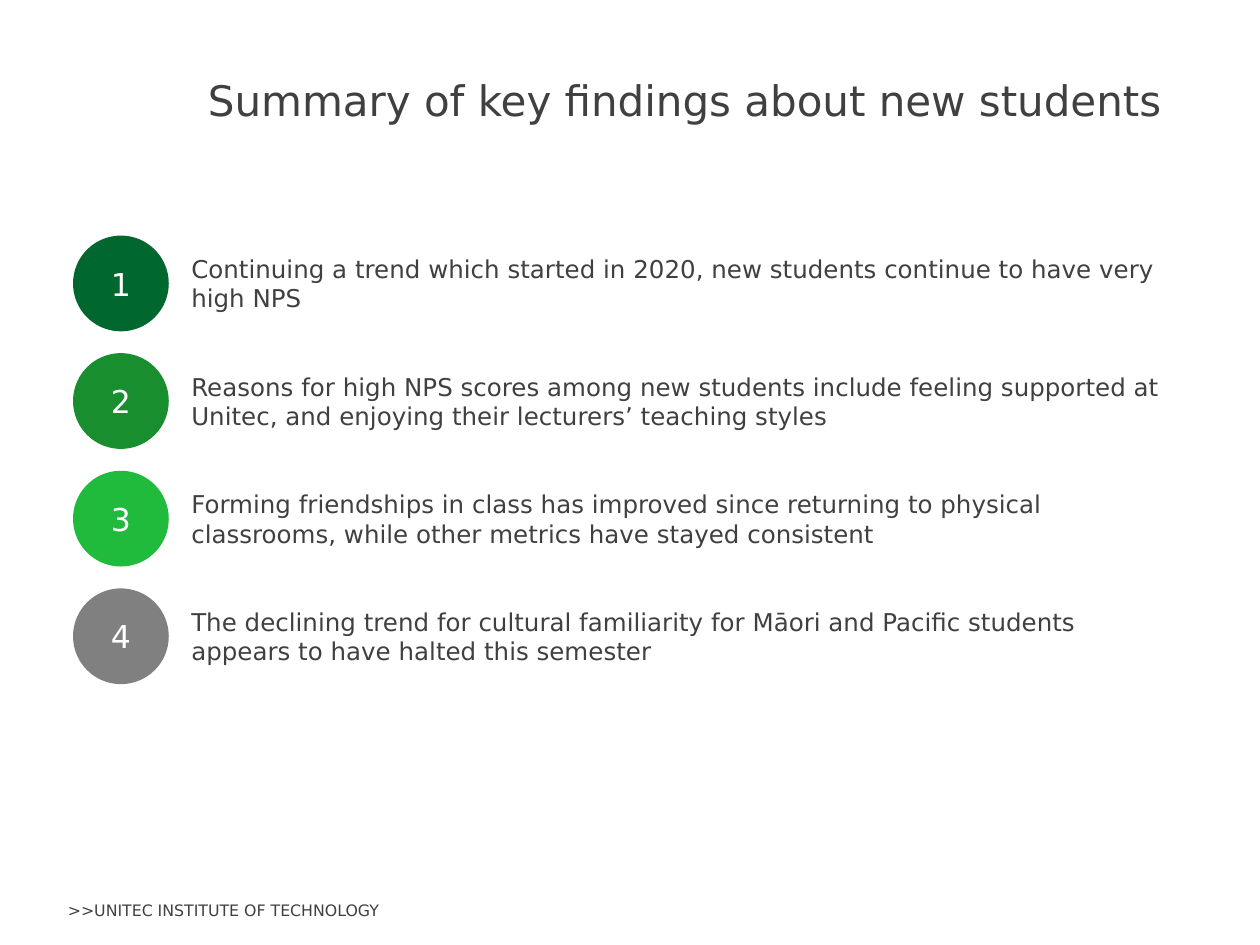
"""Build the summary slide of key findings about new students."""
import pptx
import pptx.util
import pptx.dml.color
import pptx.enum.shapes
import pptx.enum.text

COLOURS = {"text": "404040", "number": "FFFFFF"}
FINDINGS = [
    ("00682F", "Continuing a trend which started in 2020, new students continue to have very high NPS"),
    ("188E2E", "Reasons for high NPS scores among new students include feeling supported at Unitec, "
               "and enjoying their lecturers’ teaching styles"),
    ("20BA3D", "Forming friendships in class has improved since returning to physical classrooms, "
               "while other metrics have stayed consistent"),
    ("808080", "The declining trend for cultural familiarity for Māori and Pacific students "
               "appears to have halted this semester"),
]


def inches(*lengths):
    return [pptx.util.Inches(length) for length in lengths]


def write(shape, text, size, colour, alignment="LEFT", anchor="MIDDLE", fit="NONE"):
    frame = shape.text_frame
    frame.text = text
    frame.word_wrap = True
    frame.auto_size = pptx.enum.text.MSO_AUTO_SIZE[fit]
    frame.vertical_anchor = pptx.enum.text.MSO_ANCHOR[anchor]
    paragraph = frame.paragraphs[0]
    paragraph.alignment = pptx.enum.text.PP_ALIGN[alignment]
    font = paragraph.runs[0].font
    font.name = "DejaVu Sans"
    font.size = pptx.util.Pt(size)
    font.color.rgb = pptx.dml.color.RGBColor.from_string(COLOURS[colour])


presentation = pptx.Presentation()
presentation.slide_width, presentation.slide_height = inches(10, 7.5)
slide = presentation.slides.add_slide(presentation.slide_layouts[5])

title = slide.shapes.title
title.left, title.top, title.width, title.height = inches(1.55, 0.51, 7.87, 0.56)
write(title, "Summary of key findings about new students", 24, "text")

first_middle, row_pitch = 2.25, 2.8 / 3
circle_left, diameter = 0.58, 0.76
text_left, text_width, text_height = 1.42, 8, 0.57

for row, (fill, finding) in enumerate(FINDINGS):
    middle = first_middle + row * row_pitch
    circle = slide.shapes.add_shape(
        pptx.enum.shapes.MSO_SHAPE.OVAL,
        *inches(circle_left, middle - diameter / 2, diameter, diameter))
    circle.shadow.inherit = False
    circle.fill.solid()
    circle.fill.fore_color.rgb = pptx.dml.color.RGBColor.from_string(fill)
    circle.line.fill.background()
    write(circle, str(row + 1), 18, "number", alignment="CENTER")

    textbox = slide.shapes.add_textbox(
        *inches(text_left, middle - text_height / 2, text_width, text_height))
    write(textbox, finding, 14, "text", fit="SHAPE_TO_FIT_TEXT")

footer = slide.shapes.add_textbox(*inches(0.44, 7.1, 4.07, 0.25))
write(footer, ">>UNITEC INSTITUTE OF TECHNOLOGY", 9, "text", anchor="TOP", fit="SHAPE_TO_FIT_TEXT")

presentation.save("out.pptx")
